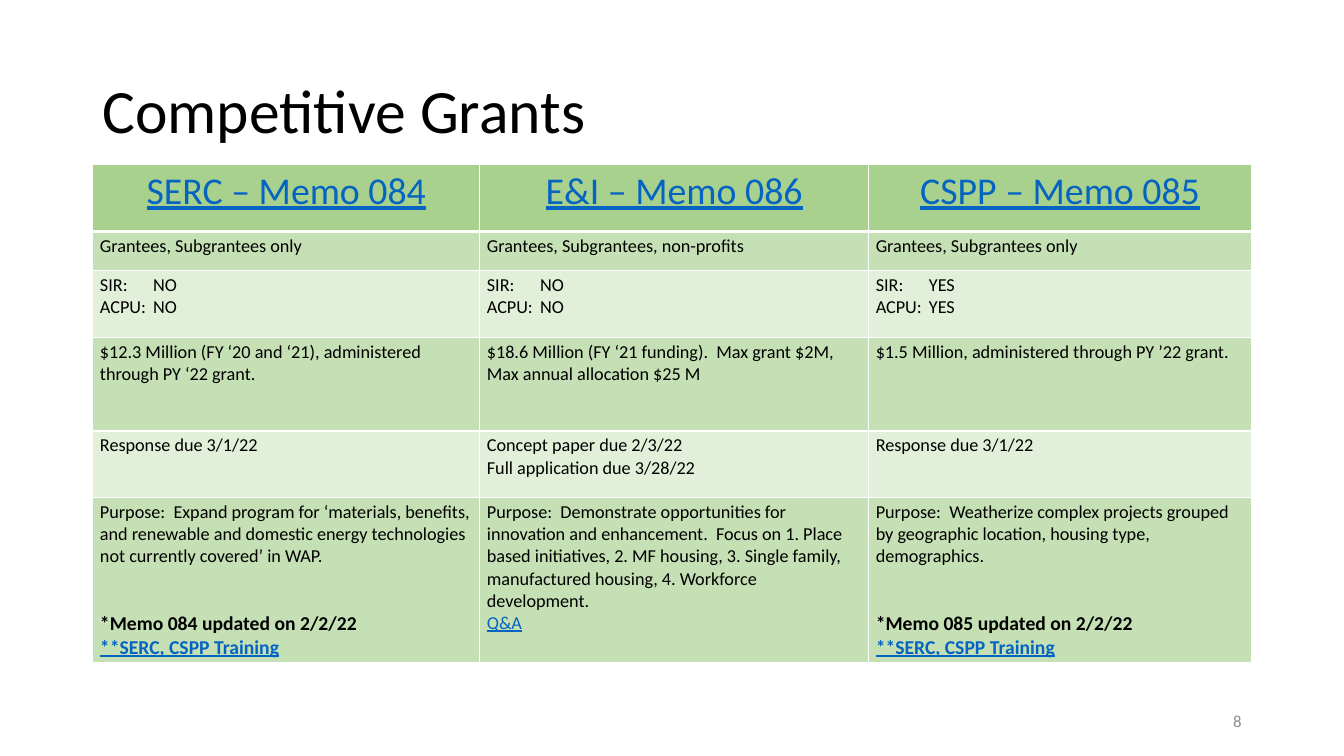
from lxml import etree
from pptx import Presentation
from pptx.dml.color import RGBColor
from pptx.enum import text
from pptx.oxml import ns
from pptx.util import Cm, Pt

COLORS = {"black": "000000", "link": "0563C1", "gray": "8C8C8C", "white": "FFFFFF",
          "header": "A9D18E", "band": "C5E0B4", "light": "E2F0D9"}
COLUMN_WIDTHS = [9.75, 9.8, 9.65]
ROW_HEIGHTS = [1.68, 0.99, 1.68, 2.36, 1.68, 4.16]
ROW_FILLS = ["header", "band", "light", "band", "light", "band"]
ROWS = [
    [["SERC – Memo 084"], ["E&I – Memo 086"], ["CSPP – Memo 085"]],
    [["Grantees, Subgrantees only"], ["Grantees, Subgrantees, non-profits"],
     ["Grantees, Subgrantees only"]],
    [["SIR:\tNO", "ACPU:\tNO"], ["SIR:\tNO", "ACPU:\tNO"], ["SIR:\tYES", "ACPU:\tYES"]],
    [["$12.3 Million (FY ‘20 and ‘21), administered through PY ‘22 grant."],
     ["$18.6 Million (FY ‘21 funding).  Max grant $2M, Max annual allocation $25 M"],
     ["$1.5 Million, administered through PY ’22 grant."]],
    [["Response due 3/1/22"],
     ["Concept paper due 2/3/22", "Full application due 3/28/22"],
     ["Response due 3/1/22"]],
    [["Purpose:  Expand program for ‘materials, benefits, and renewable and domestic "
      "energy technologies not currently covered’ in WAP.",
      "*Memo 084 updated on 2/2/22", "**SERC, CSPP Training"],
     ["Purpose:  Demonstrate opportunities for innovation and enhancement.  Focus on "
      "1. Place based initiatives, 2. MF housing, 3. Single family, manufactured "
      "housing, 4. Workforce development.", "Q&A"],
     ["Purpose:  Weatherize complex projects grouped by geographic location, housing "
      "type, demographics.",
      "*Memo 085 updated on 2/2/22", "**SERC, CSPP Training"]],
]


def style(p, size, color, bold=False, underline=False):
    p.font.name = "Calibri"
    p.font.size = Pt(size)
    p.font.bold = bold
    p.font.underline = underline
    p.font.color.rgb = RGBColor.from_string(COLORS[color])


def add_border(cell, side, width):
    ln = etree.SubElement(cell._tc.get_or_add_tcPr(), ns.qn(f"a:ln{side}"), w=str(Pt(width)))
    fill = etree.SubElement(ln, ns.qn("a:solidFill"))
    etree.SubElement(fill, ns.qn("a:srgbClr"), val=COLORS["white"])


prs = Presentation()
prs.slide_width, prs.slide_height = Cm(33.87), Cm(19.05)
s = prs.slides.add_slide(prs.slide_layouts[5])

title = s.shapes.title
title.left, title.top, title.width, title.height = Cm(2.33), Cm(1.01), Cm(29.21), Cm(3.68)
tf = title.text_frame
tf.text = "Competitive Grants"
tf.auto_size = text.MSO_AUTO_SIZE.NONE
tf.vertical_anchor = text.MSO_ANCHOR.MIDDLE
p = tf.paragraphs[0]
p.alignment = text.PP_ALIGN.LEFT
p.line_spacing = 0.9
style(p, 44, "black")

number = s.shapes.add_textbox(Cm(23.92), Cm(17.66), Cm(7.62), Cm(1.01))
tf = number.text_frame
tf.word_wrap = True
tf.vertical_anchor = text.MSO_ANCHOR.MIDDLE
p = tf.paragraphs[0]
p.text = "8"
p.alignment = text.PP_ALIGN.RIGHT
p.space_after = Pt(6)
style(p, 12, "gray")

grants = s.shapes.add_table(len(ROWS), len(COLUMN_WIDTHS), Cm(2.34), Cm(4.15),
                            Cm(sum(COLUMN_WIDTHS)), Cm(sum(ROW_HEIGHTS))).table
for column, width in zip(grants.columns, COLUMN_WIDTHS):
    column.width = Cm(width)

for i, row in enumerate(ROWS):
    grants.rows[i].height = Cm(ROW_HEIGHTS[i])
    for j, lines in enumerate(row):
        cell = grants.cell(i, j)
        cell.margin_left = cell.margin_right = Cm(0.18)
        cell.margin_top = cell.margin_bottom = Cm(0.09)
        for side in "LRTB":
            add_border(cell, side, 3 if i == 0 and side == "B" else 1)
        cell.fill.solid()
        cell.fill.fore_color.rgb = RGBColor.from_string(COLORS[ROW_FILLS[i]])
        tf = cell.text_frame
        for k, line in enumerate(lines):
            p = tf.add_paragraph() if k else tf.paragraphs[0]
            p.text = line
            if "\t" in line:
                tabs = etree.SubElement(p._p.get_or_add_pPr(), ns.qn("a:tabLst"))
                etree.SubElement(tabs, ns.qn("a:tab"), pos=str(Cm(1.34)), algn="l")
            if i == 0:
                p.alignment = text.PP_ALIGN.CENTER
                style(p, 27, "link", underline=True)
            elif line.startswith("**"):
                style(p, 14, "link", bold=True, underline=True)
            elif line.startswith("*"):
                p.space_before = Pt(31.5)
                style(p, 14, "black", bold=True)
            elif line == "Q&A":
                style(p, 13, "link", underline=True)
            else:
                style(p, 13, "black")

prs.save("out.pptx")
